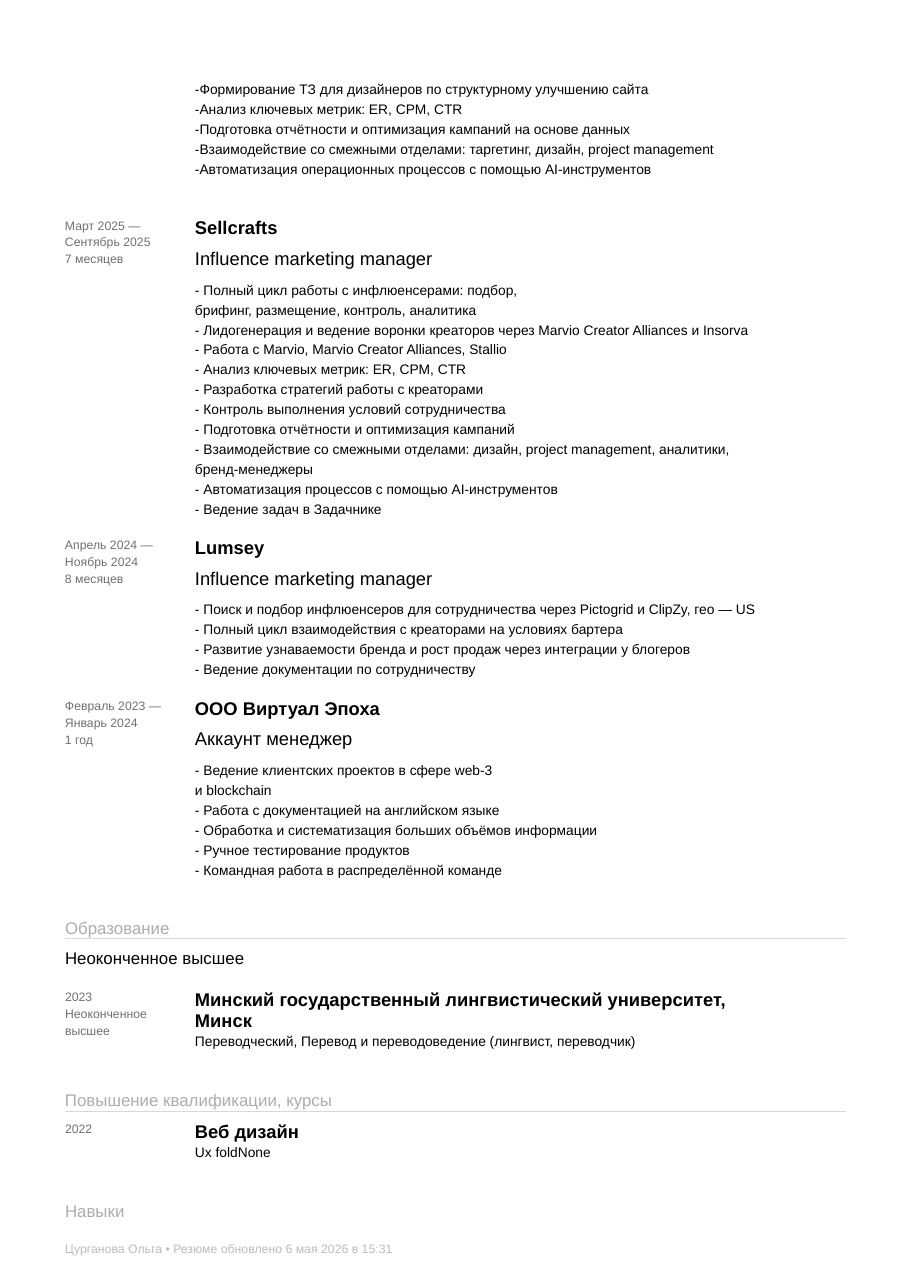
from lxml.etree import SubElement
from pptx import Presentation
from pptx.dml.color import RGBColor
from pptx.enum.shapes import MSO_CONNECTOR
from pptx.enum.text import MSO_ANCHOR, MSO_AUTO_SIZE, PP_ALIGN
from pptx.oxml.ns import qn
from pptx.util import Inches, Pt

COLORS = {"text": "000000", "date": "707070", "head": "ADADAD",
          "foot": "BCBCBC", "rule": "D8D8D8"}
LEFT, MAIN, RIGHT = 0.59, 1.77, 7.68

deck = Presentation()
deck.slide_width, deck.slide_height = Inches(8.27), Inches(11.69)
# The comparison layout has one title and four body placeholders
page = deck.slides.add_slide(deck.slide_layouts[4])
title, *bodies = page.placeholders


def write(lines, x, y, w, h, size=9, color="text", gap=13, bold=0, box=None):
    """Write lines of text; the first `bold` lines are bold."""
    holder = box is not None
    if not holder:
        box = page.shapes.add_textbox(0, 0, 0, 0)
    box.left, box.top, box.width, box.height = map(Inches, (x, y, w, h))
    frame = box.text_frame
    frame.margin_left = frame.margin_right = 0
    frame.margin_top = frame.margin_bottom = 0
    frame.word_wrap = True
    frame.auto_size = MSO_AUTO_SIZE.NONE
    frame.vertical_anchor = MSO_ANCHOR.TOP
    frame.text = "\n".join(lines)
    for i, para in enumerate(frame.paragraphs):
        if holder:
            props = para._p.get_or_add_pPr()
            props.set("marL", "0")
            props.set("indent", "0")
            SubElement(props, qn("a:buNone"))
        para.alignment = PP_ALIGN.LEFT
        para.space_before = para.space_after = Pt(0)
        para.line_spacing = Pt(gap if i else size)
        font = para.runs[0].font
        font.name, font.size, font.bold = "Arial", Pt(size), i < bold
        font.color.rgb = RGBColor.from_string(COLORS[color])


# End of the job begun on the previous page
write(["-Формирование ТЗ для дизайнеров по структурному улучшению сайта",
       "-Анализ ключевых метрик: ER, CPM, CTR",
       "-Подготовка отчётности и оптимизация кампаний на основе данных",
       "-Взаимодействие со смежными отделами: таргетинг, дизайн, project management",
       "-Автоматизация операционных процессов с помощью AI-инструментов"],
      MAIN, 0.76, 5.19, 0.85, box=bodies[0])

# Jobs: top, dates, firm and role, width and height of the list, duties
jobs = [
    (2, ["Март 2025 —", "Сентябрь 2025", "7 месяцев"],
     ["Sellcrafts", "Influence marketing manager"], 5.82, 2.1,
     ["- Полный цикл работы с инфлюенсерами: подбор,",
      "брифинг, размещение, контроль, аналитика",
      "- Лидогенерация и ведение воронки креаторов через Marvio Creator Alliances и Insorva",
      "- Работа с Marvio, Marvio Creator Alliances, Stallio",
      "- Анализ ключевых метрик: ER, CPM, CTR",
      "- Разработка стратегий работы с креаторами",
      "- Контроль выполнения условий сотрудничества",
      "- Подготовка отчётности и оптимизация кампаний",
      "- Взаимодействие со смежными отделами: дизайн, project management, аналитики,",
      "бренд-менеджеры",
      "- Автоматизация процессов с помощью AI-инструментов",
      "- Ведение задач в Задачнике"]),
    (4.9, ["Апрель 2024 —", "Ноябрь 2024", "8 месяцев"],
     ["Lumsey", "Influence marketing manager"], 5.58, 0.67,
     ["- Поиск и подбор инфлюенсеров для сотрудничества через Pictogrid и ClipZy, гео — US",
      "- Полный цикл взаимодействия с креаторами на условиях бартера",
      "- Развитие узнаваемости бренда и рост продаж через интеграции у блогеров",
      "- Ведение документации по сотрудничеству"]),
    (6.36, ["Февраль 2023 —", "Январь 2024", "1 год"],
     ["ООО Виртуал Эпоха", "Аккаунт менеджер"], 4.03, 1.03,
     ["- Ведение клиентских проектов в сфере web-3",
      "и blockchain",
      "- Работа с документацией на английском языке",
      "- Обработка и систематизация больших объёмов информации",
      "- Ручное тестирование продуктов",
      "- Командная работа в распределённой команде"]),
]
for (top, dates, firm, wide, high, tasks), body in zip(jobs, bodies[1:]):
    write(dates, LEFT, top, 1, 0.42, size=8, color="date", gap=11)
    write(firm, MAIN, top, 2.48, 0.44, size=12, gap=20, bold=1)
    write(tasks, MAIN, top + 0.58, wide, high, box=body)

# Section headings
heads = [("Образование", 8.36, 1.15, title),
         ("Повышение квалификации, курсы", 9.92, 2.73, None),
         ("Навыки", 10.93, 0.72, None)]
for name, top, wide, box in heads:
    write([name], LEFT, top, wide, 0.15, size=11, color="head", box=box)

# Rules under the first two headings
for y in (8.52, 10.09):
    rule = page.shapes.add_connector(
        MSO_CONNECTOR.STRAIGHT, Inches(LEFT), Inches(y), Inches(RIGHT), Inches(y))
    rule.line.color.rgb = RGBColor.from_string(COLORS["rule"])
    rule.line.width = Pt(1)
    SubElement(rule._element.spPr, qn("a:effectLst"))

# Education
write(["Неоконченное высшее"], LEFT, 8.63, 1.88, 0.15, size=11)
write(["2023", "Неоконченное", "высшее"], LEFT, 9, 0.95, 0.42,
      size=8, color="date", gap=11)
write(["Минский государственный лингвистический университет,", "Минск"],
      MAIN, 9, 5.38, 0.36, size=12, gap=14, bold=2)
write(["Переводческий, Перевод и переводоведение (лингвист, переводчик)"],
      MAIN, 9.4, 4.42, 0.12)

# Courses
write(["2022"], LEFT, 10.2, 0.39, 0.11, size=8, color="date")
write(["Веб дизайн"], MAIN, 10.2, 1.15, 0.17, size=12, bold=1)
write(["Ux foldNone"], MAIN, 10.41, 0.95, 0.12)

# Footer
write(["Цурганова Ольга • Резюме обновлено 6 мая 2026 в 15:31"],
      LEFT, 11.29, 3.3, 0.11, size=8, color="foot")

deck.save("out.pptx")
